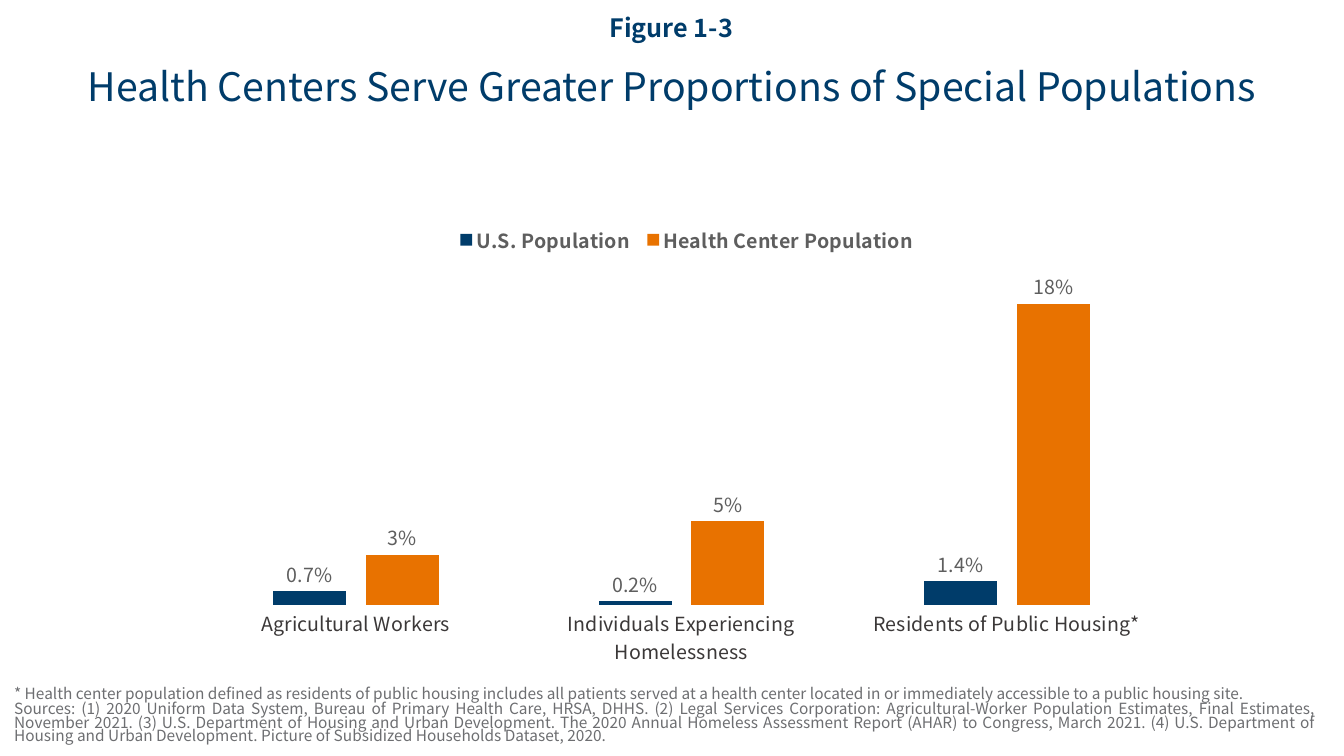
from dataclasses import dataclass
from lxml import etree
from pptx import Presentation
from pptx.chart.data import CategoryChartData as Data
from pptx.dml.color import RGBColor as Rgb
from pptx.enum.chart import XL_CHART_TYPE as Kind
from pptx.enum.chart import XL_LABEL_POSITION as Spot
from pptx.enum.chart import XL_LEGEND_POSITION as Side
from pptx.enum.chart import XL_TICK_MARK as Tick
from pptx.enum.text import MSO_ANCHOR as Anchor
from pptx.enum.text import PP_ALIGN as Align
from pptx.oxml.ns import qn
from pptx.util import Pt


@dataclass(frozen=True)
class Theme:
    face: str = "Noto Sans CJK JP"
    navy: str = "003C6A"
    orange: str = "E87200"
    gray: str = "5E5E5E"
    dark: str = "3B3838"
    note: str = "6D6E71"
    title: int = 28
    head: int = 18
    label: int = 14
    small: int = 11
    base: int = 10


THEME = Theme()

CATS = (
    "Agricultural Workers",
    "Individuals Experiencing Homelessness",
    "Residents of Public Housing*",
)
# Name, values, bar colour, label format
SERIES = (
    ("U.S. Population", (0.008, 0.002, 0.014), THEME.navy, "0.0%"),
    ("Health Center Population", (0.03, 0.05, 0.18), THEME.orange, "0%"),
)
NOTES = (
    "* Health center population defined as residents of public housing "
    "includes all patients served at a health center located in or "
    "immediately accessible to a public housing site.",
    "Sources: (1) 2020 Uniform Data System, Bureau of Primary Health Care, "
    "HRSA, DHHS. (2) Legal Services Corporation: Agricultural-Worker "
    "Population Estimates, Final Estimates, November 2021. (3) U.S. "
    "Department of Housing and Urban Development. The 2020 Annual Homeless "
    "Assessment Report (AHAR) to Congress, March 2021. (4) U.S. Department "
    "of Housing and Urban Development. Picture of Subsidized Households "
    "Dataset, 2020.",
)


def style(font, size, color, bold=False):
    font.name = THEME.face
    font.size = Pt(size)
    font.bold = bold
    font.color.rgb = Rgb.from_string(color)


def add_text(slide, box, *paras, size, color=THEME.navy, bold=False,
             align=Align.CENTER, anchor=Anchor.TOP, line=0.9, before=0):
    frame = slide.shapes.add_textbox(*map(Pt, box)).text_frame
    frame.word_wrap = True
    frame.vertical_anchor = anchor
    for i, words in enumerate(paras):
        para = frame.add_paragraph() if i else frame.paragraphs[0]
        para.alignment = align
        para.line_spacing = line
        para.space_before = Pt(before)
        run = para.add_run()
        run.text = words
        style(run.font, size, color, bold)


def place(node, index, box, inner=False):
    """Give a chart part a fixed place, in shares of the chart."""
    for old in node.findall(qn("c:layout")):
        node.remove(old)
    layout = etree.Element(qn("c:layout"))
    manual = etree.SubElement(layout, qn("c:manualLayout"))
    rules = [("layoutTarget", "inner")] if inner else []
    rules += [("xMode", "edge"), ("yMode", "edge")]
    rules += zip("xywh", map(str, box))
    for tag, val in rules:
        etree.SubElement(manual, qn("c:" + tag), val=val)
    node.insert(index, layout)


def set_axes(chart):
    cat = chart.category_axis
    cat.major_tick_mark = cat.minor_tick_mark = Tick.NONE
    cat.has_major_gridlines = False
    cat.format.line.fill.background()
    style(cat.tick_labels.font, THEME.label, THEME.dark)
    val = chart.value_axis
    val.minimum_scale, val.maximum_scale = 0, 0.2
    val.has_major_gridlines = False
    val.tick_labels.number_format = "0.0%"
    val.tick_labels.number_format_is_linked = False
    val.visible = False


def set_bars(plot):
    plot.gap_width, plot.overlap = 219, -27
    plot.vary_by_categories = False
    for bars, (_, _, color, form) in zip(plot.series, SERIES):
        bars.format.fill.solid()
        bars.format.fill.fore_color.rgb = Rgb.from_string(color)
        bars.invert_if_negative = False
        labels = bars.data_labels
        labels.show_value = True
        labels.position = Spot.OUTSIDE_END
        labels.number_format = form
        labels.number_format_is_linked = False
        style(labels.font, THEME.label, THEME.gray)


def set_label(point, words):
    label = point.data_label
    run = label.text_frame.paragraphs[0].add_run()
    run.text = words
    style(run.font, THEME.label, THEME.gray)
    label.position = Spot.OUTSIDE_END


def set_legend(chart):
    chart.has_legend = True
    legend = chart.legend
    legend.position = Side.BOTTOM
    legend.include_in_layout = False
    style(legend.font, THEME.label, THEME.gray, bold=True)
    place(legend._element, 1, (0.28, 0.01, 0.47, 0.08))


def add_bars(slide, box):
    data = Data(number_format="0.0%")
    data.categories = CATS
    for name, vals, *_ in SERIES:
        data.add_series(name, vals)
    chart = slide.shapes.add_chart(
        Kind.COLUMN_CLUSTERED, *map(Pt, box), data).chart
    chart.has_title = False
    style(chart.font, THEME.base, THEME.navy)
    set_axes(chart)
    set_bars(chart.plots[0])
    set_label(chart.plots[0].series[0].points[0], "0.7%")
    set_legend(chart)
    area = chart._chartSpace.find(".//" + qn("c:plotArea"))
    place(area, 0, (0.025, 0.119, 0.969, 0.754), inner=True)


def main():
    deck = Presentation()
    deck.slide_width, deck.slide_height = Pt(960), Pt(540)
    slide = deck.slides.add_slide(deck.slide_layouts[6])

    # Footnote and sources
    add_text(slide, (3, 450, 944.5, 85.5), *NOTES, size=THEME.small,
             color=THEME.note, align=Align.JUSTIFY, anchor=Anchor.BOTTOM,
             line=0.74, before=1)
    # Title and figure number
    add_text(slide, (34.5, 44.5, 890.5, 80.5),
             "Health Centers Serve Greater Proportions of Special Populations",
             size=THEME.title)
    add_text(slide, (385, 4, 189, 34.5), "Figure 1-3", size=THEME.head,
             bold=True, anchor=Anchor.MIDDLE)
    # Chart
    add_bars(slide, (120, 155.5, 720, 319.5))

    deck.save("out.pptx")


if __name__ == "__main__":
    main()
